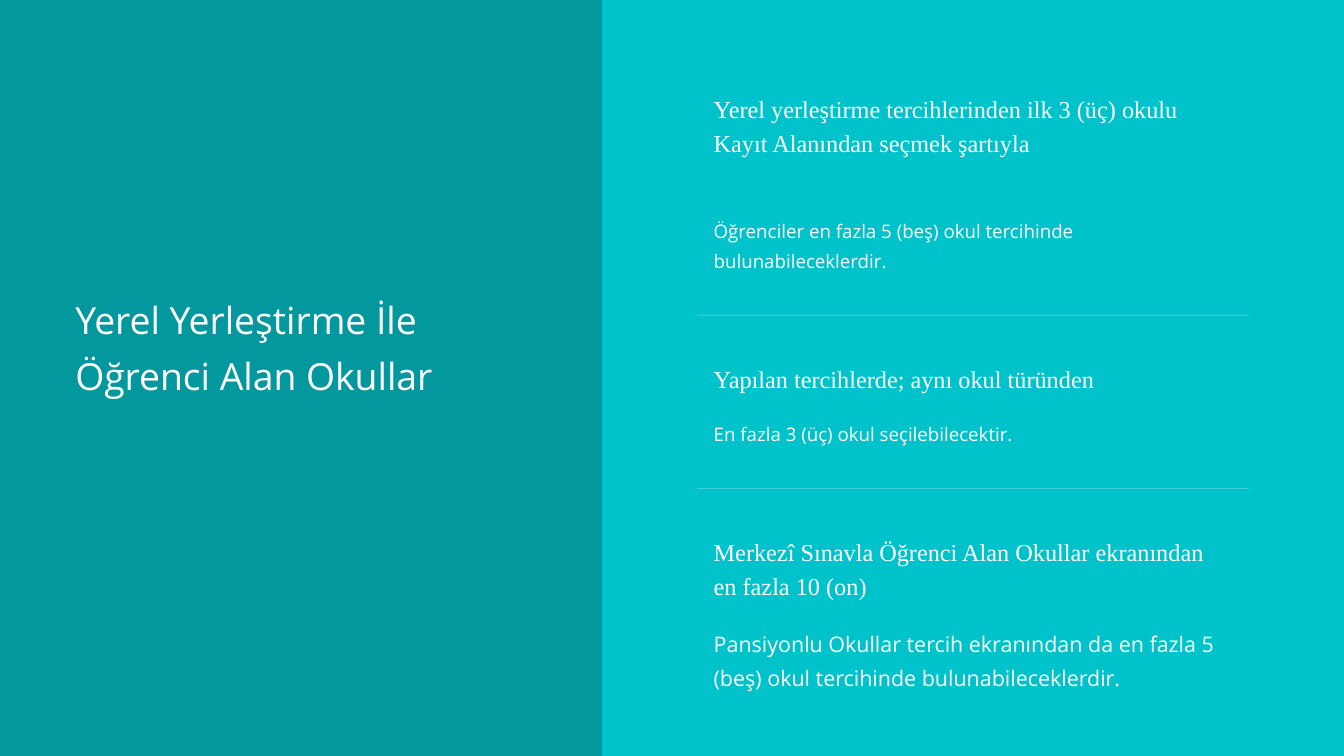
from dataclasses import dataclass

from lxml.etree import SubElement
from pptx import Presentation
from pptx.dml.color import RGBColor
from pptx.enum.shapes import MSO_CONNECTOR, MSO_SHAPE
from pptx.enum.text import MSO_ANCHOR, MSO_AUTO_SIZE
from pptx.oxml.ns import qn
from pptx.slide import Slide
from pptx.util import Pt

WHITE = RGBColor(0xFF, 0xFF, 0xFF)
DARK_TEAL = RGBColor(0x03, 0x98, 0x9E)
BRIGHT_TEAL = RGBColor(0x00, 0xC2, 0xCB)

SLIDE_WIDTH, SLIDE_HEIGHT = 1440, 810
PANEL_LEFT = 645.12
COLUMN_LEFT, COLUMN_WIDTH = 764.64, 555.84
DIVIDER_LEFT, DIVIDER_RIGHT = 746.64, 1337.76
DIVIDER_TOPS = (337.68, 523.44)
DIVIDER_OPACITY = 25


@dataclass(frozen=True)
class TextStyle:
    font: str
    size: float
    line_spacing: float


@dataclass(frozen=True)
class TextBlock:
    text: str
    style: TextStyle
    top: float
    height: float
    left: float = COLUMN_LEFT
    width: float = COLUMN_WIDTH


TITLE = TextStyle("Open Sans", 40, 60)
HEADING = TextStyle("Times New Roman", 26, 36.4)
BODY = TextStyle("Open Sans", 20, 32)
LARGE_BODY = TextStyle("Open Sans", 23, 36.8)

TEXT_BLOCKS = (
    TextBlock("Yerel Yerleştirme İle Öğrenci Alan Okullar", TITLE,
              306.72, 118.08, left=80.64, width=469.44),
    TextBlock("Yerel yerleştirme tercihlerinden ilk 3 (üç) okulu Kayıt Alanından "
              "seçmek şartıyla", HEADING, 95.76, 105.84),
    TextBlock("Öğrenciler en fazla 5 (beş) okul tercihinde bulunabileceklerdir.",
              BODY, 227.52, 60.48),
    TextBlock("Yapılan tercihlerde; aynı okul türünden", HEADING, 385.2, 33.84),
    TextBlock("En fazla 3 (üç) okul seçilebilecektir.", BODY, 444.96, 28.8),
    TextBlock("Merkezî Sınavla Öğrenci Alan Okullar ekranından en fazla 10 (on)",
              HEADING, 570.96, 69.84),
    TextBlock("Pansiyonlu Okullar tercih ekranından da en fazla 5 (beş) okul "
              "tercihinde bulunabileceklerdir.", LARGE_BODY, 666.72, 69.12),
)

FRAME_FORMAT = {
    "margin_left": 0,
    "margin_top": 0,
    "margin_right": 0,
    "margin_bottom": 0,
    "word_wrap": True,
    "auto_size": MSO_AUTO_SIZE.SHAPE_TO_FIT_TEXT,
    "vertical_anchor": MSO_ANCHOR.TOP,
}


def set_attributes(target: object, values: dict) -> None:
    for name, value in values.items():
        setattr(target, name, value)


def add_panel(slide: Slide) -> None:
    panel = slide.shapes.add_shape(
        MSO_SHAPE.RECTANGLE, Pt(PANEL_LEFT), Pt(0),
        Pt(SLIDE_WIDTH - PANEL_LEFT), Pt(SLIDE_HEIGHT))
    panel.shadow.inherit = False
    panel.fill.solid()
    panel.fill.fore_color.rgb = BRIGHT_TEAL
    panel.line.fill.background()


def add_divider(slide: Slide, top: float) -> None:
    """Draw a faint horizontal rule between two sections."""
    divider = slide.shapes.add_connector(
        MSO_CONNECTOR.STRAIGHT,
        Pt(DIVIDER_LEFT), Pt(top), Pt(DIVIDER_RIGHT), Pt(top))
    divider.line.width = Pt(1)
    divider.line.color.rgb = WHITE
    properties = divider._element.spPr
    color = next(properties.iter(qn("a:srgbClr")))
    SubElement(color, qn("a:alpha"), val=str(DIVIDER_OPACITY * 1000))
    SubElement(properties, qn("a:effectLst"))


def add_text_block(slide: Slide, block: TextBlock) -> None:
    box = slide.shapes.add_textbox(
        Pt(block.left), Pt(block.top), Pt(block.width), Pt(block.height))
    set_attributes(box.text_frame, FRAME_FORMAT)
    paragraph = box.text_frame.paragraphs[0]
    paragraph.line_spacing = Pt(block.style.line_spacing)
    run = paragraph.add_run()
    run.text = block.text
    set_attributes(run.font, {"name": block.style.font, "size": Pt(block.style.size)})
    run.font.color.rgb = WHITE


def main() -> None:
    presentation = Presentation()
    set_attributes(presentation, {"slide_width": Pt(SLIDE_WIDTH),
                                  "slide_height": Pt(SLIDE_HEIGHT)})
    slide = presentation.slides.add_slide(presentation.slide_layouts[6])
    slide.background.fill.solid()
    slide.background.fill.fore_color.rgb = DARK_TEAL

    add_panel(slide)
    for top in DIVIDER_TOPS:
        add_divider(slide, top)
    for block in TEXT_BLOCKS:
        add_text_block(slide, block)
    presentation.save("out.pptx")


if __name__ == "__main__":
    main()
